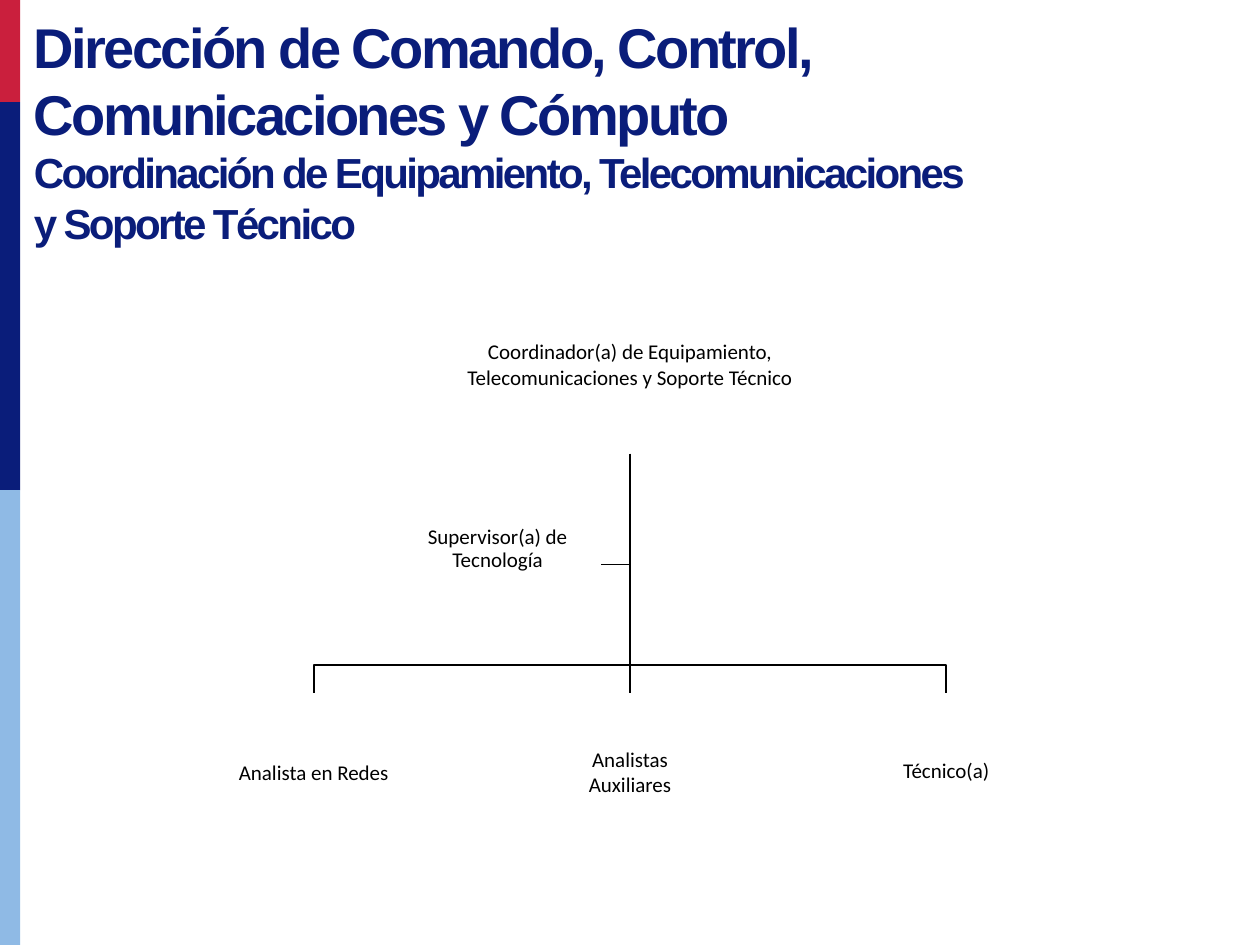
from dataclasses import dataclass

from lxml import etree
from pptx import Presentation
from pptx.dml.color import RGBColor
from pptx.enum.shapes import MSO_CONNECTOR as Connector, MSO_SHAPE as Shape
from pptx.enum.text import MSO_ANCHOR as Anchor, MSO_AUTO_SIZE as AutoSize, PP_ALIGN as Align
from pptx.oxml.ns import qn
from pptx.util import Inches, Pt


@dataclass(frozen=True)
class Theme:
    red = RGBColor(0xCA, 0x1F, 0x3D)
    navy = RGBColor(0x0A, 0x1D, 0x7A)
    sky = RGBColor(0x8F, 0xBA, 0xE5)
    white = RGBColor(0xFF, 0xFF, 0xFF)
    black = RGBColor(0, 0, 0)
    title_font = "Arial"
    chart_font = "Calibri"
    title_size = Pt(32)
    subtitle_size = Pt(24)
    chart_size = Pt(12)
    line_width = Pt(1)


theme = Theme()
presentation = Presentation()
presentation.slide_width = Inches(10)
presentation.slide_height = Inches(7.5)
slide = presentation.slides.add_slide(presentation.slide_layouts[6])


def add_block(left, top, width, height, color):
    shape = slide.shapes.add_shape(
        Shape.RECTANGLE, Inches(left), Inches(top), Inches(width), Inches(height))
    shape.shadow.inherit = False
    shape.fill.solid()
    shape.fill.fore_color.rgb = color
    shape.line.fill.background()
    return shape


# Side stripe
stripe_top = 0
for stripe_bottom, color in [(0.81, theme.red), (3.89, theme.navy), (7.5, theme.sky)]:
    add_block(0, stripe_top, 0.16, stripe_bottom - stripe_top, color)
    stripe_top = stripe_bottom

# Title and subtitle
title_box = slide.shapes.add_textbox(Inches(0.17), Inches(0.05), Inches(7.75), Inches(1.99))
title_frame = title_box.text_frame
title_frame.word_wrap = True
title_frame.auto_size = AutoSize.SHAPE_TO_FIT_TEXT
title_frame.text = (
    "Dirección de Comando, Control, Comunicaciones y Cómputo\n"
    "Coordinación de Equipamiento, Telecomunicaciones y Soporte Técnico")
for paragraph, size in zip(title_frame.paragraphs, [theme.title_size, theme.subtitle_size]):
    paragraph.font.name = theme.title_font
    paragraph.font.size = size
    paragraph.font.bold = True
    paragraph.font.color.rgb = theme.navy
    for run in paragraph.runs:
        run._r.get_or_add_rPr().set("spc", "-150")

# Organization chart lines
trunk_x, trunk_top, branch_y, leaf_top = 5, 3.6, 5.28, 5.5
leaf_width, leaf_step = 2.09, 2.51
supervisor_right, supervisor_y = 4.77, 4.48

branches = [[(trunk_x, supervisor_y), (supervisor_right, supervisor_y)]]
for leaf_x in (trunk_x - leaf_step, trunk_x + leaf_step):
    branches.append([(trunk_x, branch_y), (leaf_x, branch_y), (leaf_x, leaf_top)])
for points in branches:
    corners = [(Inches(x), Inches(y)) for x, y in points]
    builder = slide.shapes.build_freeform(Inches(trunk_x), Inches(trunk_top))
    builder.add_line_segments(corners, close=False)
    branch = builder.convert_to_shape()
    branch.shadow.inherit = False
    branch.fill.background()
    branch.line.color.rgb = theme.black
    branch.line.width = theme.line_width

trunk = slide.shapes.add_connector(
    Connector.STRAIGHT, Inches(trunk_x), Inches(trunk_top), Inches(trunk_x), Inches(leaf_top))
trunk.line.color.rgb = theme.black
trunk.line.width = theme.line_width
etree.SubElement(trunk._element.spPr, qn("a:effectLst"))

# Organization chart posts: text, left, top, width, height, bottom inset, line spacing
posts = [
    ("Coordinador(a) de Equipamiento, Telecomunicaciones y Soporte Técnico",
     3.66, 2.38, 2.68, 1.22, 0.21, 1.0),
    ("Supervisor(a) de Tecnología", 3.13, 4.05, 1.64, 0.86, 0.25, 0.9),
]
leaves = [("Analista en Redes", 1.0), ("Analistas\nAuxiliares", 1.0), ("Técnico(a)", 0.9)]
for index, (text, spacing) in enumerate(leaves):
    left = trunk_x + (index - 1) * leaf_step - leaf_width / 2
    posts.append((text, left, leaf_top, leaf_width, 1.25, 0.01, spacing))

for text, left, top, width, height, bottom_inset, spacing in posts:
    post = add_block(left, top, width, height, theme.white)
    frame = post.text_frame
    frame.word_wrap = True
    frame.vertical_anchor = Anchor.MIDDLE
    frame.margin_left = frame.margin_right = frame.margin_top = Inches(0.01)
    frame.margin_bottom = Inches(bottom_inset)
    frame.text = text
    for paragraph in frame.paragraphs:
        paragraph.alignment = Align.CENTER
        paragraph.line_spacing = spacing
        paragraph.font.name = theme.chart_font
        paragraph.font.size = theme.chart_size
        paragraph.font.color.rgb = theme.black

presentation.save("out.pptx")
